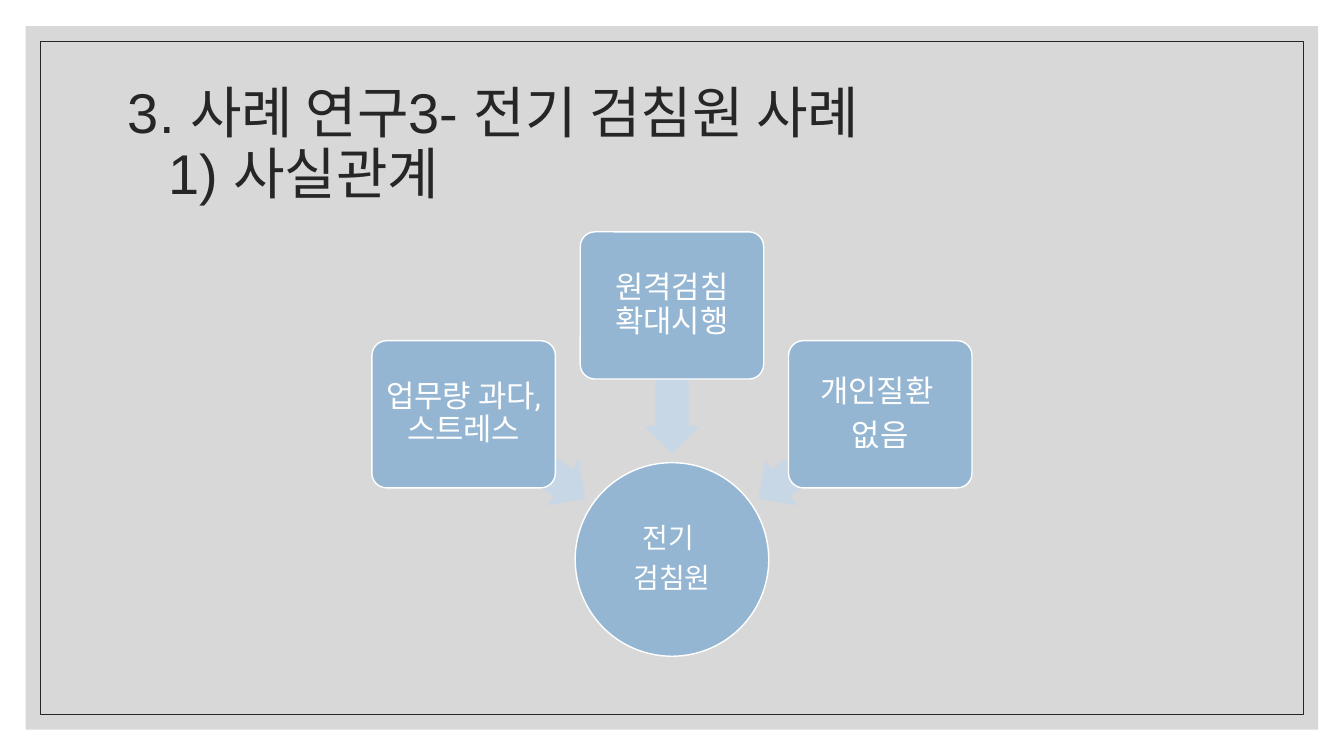
from dataclasses import dataclass

import lxml.etree
import pptx
import pptx.dml.color
import pptx.enum.shapes
import pptx.enum.text
import pptx.oxml.ns
import pptx.util

RGBColor = pptx.dml.color.RGBColor
ShapeType = pptx.enum.shapes.MSO_SHAPE
Align = pptx.enum.text.PP_ALIGN
Anchor = pptx.enum.text.MSO_ANCHOR

SLIDE_WIDTH = pptx.util.Inches(13.33)
SLIDE_HEIGHT = pptx.util.Inches(7.5)

WHITE = RGBColor(0xFF, 0xFF, 0xFF)
INK = RGBColor(0x26, 0x26, 0x26)
PANEL_GRAY = RGBColor(0xBF, 0xBF, 0xBF)
NODE_BLUE = RGBColor(0x94, 0xB6, 0xD2)
ARROW_BLUE = RGBColor(0xC8, 0xD7, 0xE5)

# Diagram measures, in percent of the slide's width or height
COLUMN_PITCH = 15.5
ARROW_PITCH = 10.95
BOX_SIZE = (13.65, 19.47)
ARROW_SIZE = (11.03, 7.33)
CIRCLE_SIZE = (14.4, 25.6)


@dataclass(frozen=True)
class Area:
    """Centre and size in percent of the slide."""
    center_x: float
    center_y: float
    width: float
    height: float

    def box(self) -> tuple[int, int, int, int]:
        return (
            int(SLIDE_WIDTH * (self.center_x - self.width / 2) / 100),
            int(SLIDE_HEIGHT * (self.center_y - self.height / 2) / 100),
            int(SLIDE_WIDTH * self.width / 100),
            int(SLIDE_HEIGHT * self.height / 100),
        )


@dataclass(frozen=True)
class Cause:
    lines: tuple[str, ...]
    column: int
    center_y: float
    arrow_y: float
    arrow_rotation: float


CAUSES = (
    Cause(("업무량 과다, 스트레스",), -1, 54.8, 60.33, 215),
    Cause(("원격검침 확대시행",), 0, 40.4, 50.2, 270),
    Cause(("개인질환 ", "없음"), 1, 54.8, 60.33, 325),
)


def add_figure(slide, kind, area: Area, fill: RGBColor | None = None,
               line: RGBColor | None = None, line_width: float = 1):
    shape = slide.shapes.add_shape(kind, *area.box())
    shape.shadow.inherit = False
    if fill is None:
        shape.fill.background()
    else:
        shape.fill.solid()
        shape.fill.fore_color.rgb = fill
    if line is None:
        shape.line.fill.background()
    else:
        shape.line.color.rgb = line
        shape.line.width = pptx.util.Pt(line_width)
    return shape


def write_lines(shape, lines: tuple[str, ...], font_name: str, size: float,
                color: RGBColor, alignment, space_after: float = 0) -> None:
    frame = shape.text_frame
    frame.word_wrap = True
    frame.vertical_anchor = Anchor.MIDDLE
    for index, text in enumerate(lines):
        paragraph = frame.add_paragraph() if index else frame.paragraphs[0]
        paragraph.alignment = alignment
        paragraph.line_spacing = 0.9
        paragraph.space_after = pptx.util.Pt(space_after)
        run = paragraph.add_run()
        run.text = text
        run.font.name = font_name
        run.font.size = pptx.util.Pt(size)
        run.font.color.rgb = color


def add_node(slide, kind, area: Area, lines: tuple[str, ...],
             size: float, inset: float):
    shape = add_figure(slide, kind, area, NODE_BLUE, WHITE)
    frame = shape.text_frame
    frame.margin_left = frame.margin_right = pptx.util.Inches(inset)
    frame.margin_top = frame.margin_bottom = pptx.util.Inches(inset)
    write_lines(shape, lines, "Roboto", size, WHITE, Align.CENTER, 0.35 * size)
    return shape


def add_backdrop(slide) -> None:
    panel = add_figure(slide, ShapeType.RECTANGLE, Area(50, 50, 96.17, 93.07), PANEL_GRAY)
    color = panel.fill._xPr.find(".//" + pptx.oxml.ns.qn("a:srgbClr"))
    lxml.etree.SubElement(color, pptx.oxml.ns.qn("a:alpha"), val="60000")
    add_figure(slide, ShapeType.RECTANGLE, Area(50, 50, 93.92, 89.07), line=INK, line_width=0.5)


def add_title(slide) -> None:
    title = slide.shapes.add_textbox(*Area(50.04, 19.33, 82.52, 20).box())
    write_lines(title, ("3. 사례 연구3- 전기 검침원 사례", "1) 사실관계"),
                "Arial", 40, INK, Align.LEFT)
    subtitle = title.text_frame.paragraphs[1]
    subtitle._p.get_or_add_pPr().set("marL", str(pptx.util.Inches(0.4)))


def add_cause(slide, cause: Cause) -> None:
    arrow_area = Area(50 + cause.column * ARROW_PITCH, cause.arrow_y, *ARROW_SIZE)
    arrow = add_figure(slide, ShapeType.LEFT_ARROW, arrow_area, ARROW_BLUE)
    arrow.adjustments[0] = 0.6
    arrow.adjustments[1] = 0.5
    arrow.rotation = cause.arrow_rotation

    box_area = Area(50 + cause.column * COLUMN_PITCH, cause.center_y, *BOX_SIZE)
    box = add_node(slide, ShapeType.ROUNDED_RECTANGLE, box_area, cause.lines, 22, 0.05)
    box.adjustments[0] = 0.1


def main() -> None:
    presentation = pptx.Presentation()
    presentation.slide_width = SLIDE_WIDTH
    presentation.slide_height = SLIDE_HEIGHT
    slide = presentation.slides.add_slide(presentation.slide_layouts[6])

    # Backdrop and heading
    add_backdrop(slide)
    add_title(slide)

    # Causes converging on the meter reader
    add_node(slide, ShapeType.OVAL, Area(50, 74, *CIRCLE_SIZE), ("전기 ", "검침원"), 20, 0.01)
    for cause in CAUSES:
        add_cause(slide, cause)

    presentation.save("out.pptx")


if __name__ == "__main__":
    main()
